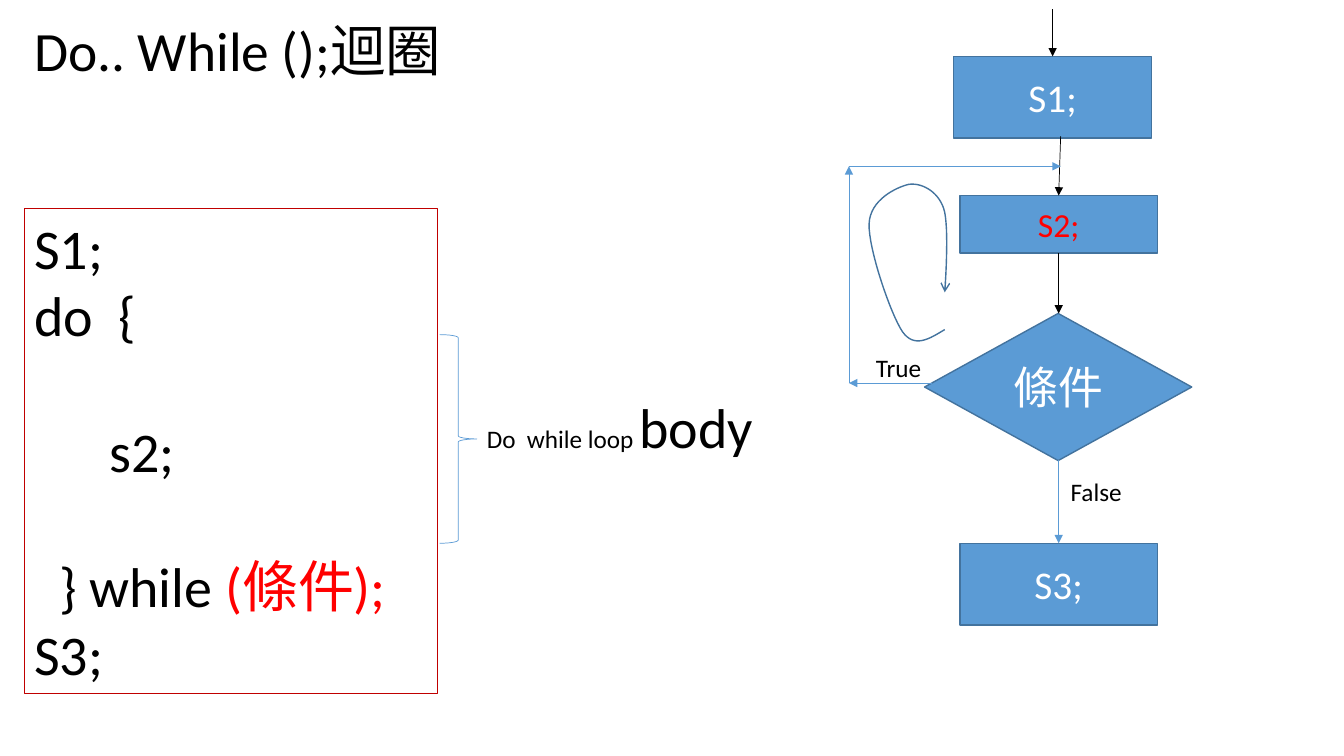
"""Build a slide that explains the do-while loop with code and a flowchart."""
from lxml import etree
from pptx import Presentation
from pptx.dml.color import RGBColor
from pptx.enum.shapes import MSO_CONNECTOR, MSO_SHAPE
from pptx.enum.text import MSO_ANCHOR, PP_ALIGN
from pptx.oxml.ns import qn
from pptx.util import Inches, Pt

BLACK = RGBColor(0x00, 0x00, 0x00)
WHITE = RGBColor(0xFF, 0xFF, 0xFF)
RED = RGBColor(0xFF, 0x00, 0x00)
DARK_RED = RGBColor(0xC0, 0x00, 0x00)
BLUE = RGBColor(0x5B, 0x9B, 0xD5)
DARK_BLUE = RGBColor(0x43, 0x73, 0x9E)

RECTANGLE = MSO_SHAPE.RECTANGLE
PROCESS = MSO_SHAPE.FLOWCHART_PROCESS
DECISION = MSO_SHAPE.FLOWCHART_DECISION
BRACE = MSO_SHAPE.RIGHT_BRACE
STRAIGHT = MSO_CONNECTOR.STRAIGHT
TOP, MIDDLE = MSO_ANCHOR.TOP, MSO_ANCHOR.MIDDLE
LEFT, CENTER = PP_ALIGN.LEFT, PP_ALIGN.CENTER

FONT = "Calibri"
CELL = Inches(0.1)
CODE_SIZE = 40
CODE_LINE = 48.8
CURVE_STEPS = 16


def grid(count):
    return round(count * CELL)


def write(para, text, size=CODE_SIZE, color=BLACK):
    span = para.add_run()
    span.text = text
    span.font.name = FONT
    span.font.size = Pt(size)
    span.font.color.rgb = color


def curve_points(start, first, second, end):
    for step in range(1, CURVE_STEPS + 1):
        t = step / CURVE_STEPS
        weights = ((1 - t) ** 3, 3 * t * (1 - t) ** 2, 3 * t * t * (1 - t), t ** 3)
        corners = (start, first, second, end)
        yield tuple(
            grid(sum(w * corner[axis] for w, corner in zip(weights, corners)))
            for axis in (0, 1)
        )


class Page:
    def __init__(self, deck):
        self.shapes = deck.slides.add_slide(deck.slide_layouts[6]).shapes

    def stroke(self, item, color, width, head=None):
        item.line.color.rgb = color
        item.line.width = Pt(width)
        if head:
            outline = item.line._get_or_add_ln()
            etree.SubElement(outline, qn("a:tailEnd"), type=head)

    def shape(self, kind, place, line, width, fill=None):
        box = self.shapes.add_shape(kind, *map(grid, place))
        box.shadow.inherit = False
        if fill is None:
            box.fill.background()
        else:
            box.fill.solid()
            box.fill.fore_color.rgb = fill
        self.stroke(box, line, width)
        return box

    def node(self, kind, place, text, size, color=WHITE):
        frame = self.shape(kind, place, DARK_BLUE, 1, BLUE).text_frame
        frame.vertical_anchor = MIDDLE
        para = frame.paragraphs[0]
        para.alignment = CENTER
        write(para, text, size, color)

    def label(self, place, *spans, anchor=TOP, wrap=True, spacing=1.0):
        frame = self.shapes.add_textbox(*map(grid, place)).text_frame
        frame.word_wrap = wrap
        frame.vertical_anchor = anchor
        para = frame.paragraphs[0]
        para.line_spacing = spacing
        for text, size in spans:
            write(para, text, size)

    def code(self, place, lines):
        frame = self.shape(RECTANGLE, place, DARK_RED, 0.75).text_frame
        frame.vertical_anchor = TOP
        for number, (indent, gap, spans) in enumerate(lines):
            para = frame.add_paragraph() if number else frame.paragraphs[0]
            para.alignment = LEFT
            para.space_before = Pt(gap)
            para._p.get_or_add_pPr().set("marL", str(grid(indent)))
            for text, color in spans:
                write(para, text, color=color)

    def arrow(self, start, end, color):
        line = self.shapes.add_connector(STRAIGHT, *map(grid, start + end))
        self.stroke(line, color, 0.5, "triangle")
        etree.SubElement(line._element.spPr, qn("a:effectLst"))

    def curve(self, start, segments):
        builder = self.shapes.build_freeform(*map(grid, start))
        for segment in segments:
            builder.add_line_segments(curve_points(start, *segment), close=False)
            start = segment[-1]
        path = builder.convert_to_shape()
        path.shadow.inherit = False
        path.fill.background()
        self.stroke(path, DARK_BLUE, 1, "arrow")


def main():
    deck = Presentation()
    deck.slide_width, deck.slide_height = Inches(13.33), Inches(7.5)
    page = Page(deck)

    page.label((2.4, 2, 115, 6.6), ("Do.. While ();迴圈", 39.6),
               anchor=MIDDLE, spacing=0.9)
    page.code((2.4, 20.7, 41, 48.1), [
        (0, 0, [("S1;", BLACK)]),
        (0, 0, [("do  {", BLACK)]),
        (7.5, CODE_LINE, [("s2;", BLACK)]),
        (2.5, CODE_LINE, [("} while ", BLACK), ("(條件);", RED)]),
        (0, 0, [("S3;", BLACK)]),
    ])
    page.shape(BRACE, (43.6, 33.2, 3.7, 20.7), BLUE, 0.5)
    page.label((47.3, 38.5, 28.8, 7.7), ("Do  while loop ", 18), ("body", CODE_SIZE))

    axis, entry, loop_left, merge = 105, 104.4, 84.2, (105.2, 16.5)
    page.node(DECISION, (91.7, 31.1, 26.5, 14.6), "條件", 32)
    for left, top, height, text, size, color in (
        (94.6, 5.6, 8.1, "S1;", 28, WHITE),
        (95.2, 19.4, 5.7, "S2;", 24, RED),
        (95.2, 53.9, 8.1, "S3;", 28, WHITE),
    ):
        page.node(PROCESS, (left, top, 19.6, height), text, size, color)

    for start, end, color in (
        ((entry, 0.9), (entry, 5.6), BLACK),
        ((merge[0], 13.5), (axis, 19.4), BLACK),
        ((axis, 25.1), (axis, 31.1), BLACK),
        ((axis, 45.6), (axis, 53.9), BLUE),
        ((92.4, 38), (loop_left, 38), BLUE),
        ((loop_left, 38), (loop_left, merge[1]), BLUE),
        ((loop_left, merge[1]), merge, BLUE),
    ):
        page.arrow(start, end, color)

    page.label((85.9, 34.5, 6.6, 7.1), ("True", 18), wrap=False)
    page.label((105.2, 46.8, 7.1, 7.1), ("False", 18), wrap=False)
    page.curve((93.7, 32.7), [
        ((92.2, 33.6), (90.7, 34.6), (89.5, 32.9)),
        ((88.3, 31.1), (86.1, 24.6), (86.2, 22.2)),
        ((86.3, 19.8), (88.9, 18.6), (90.1, 18.3)),
        ((91.3, 18.1), (93, 18.9), (93.6, 20.7)),
        ((94.2, 22.5), (93.7, 29), (93.7, 29)),
    ])

    deck.save("out.pptx")


if __name__ == "__main__":
    main()
